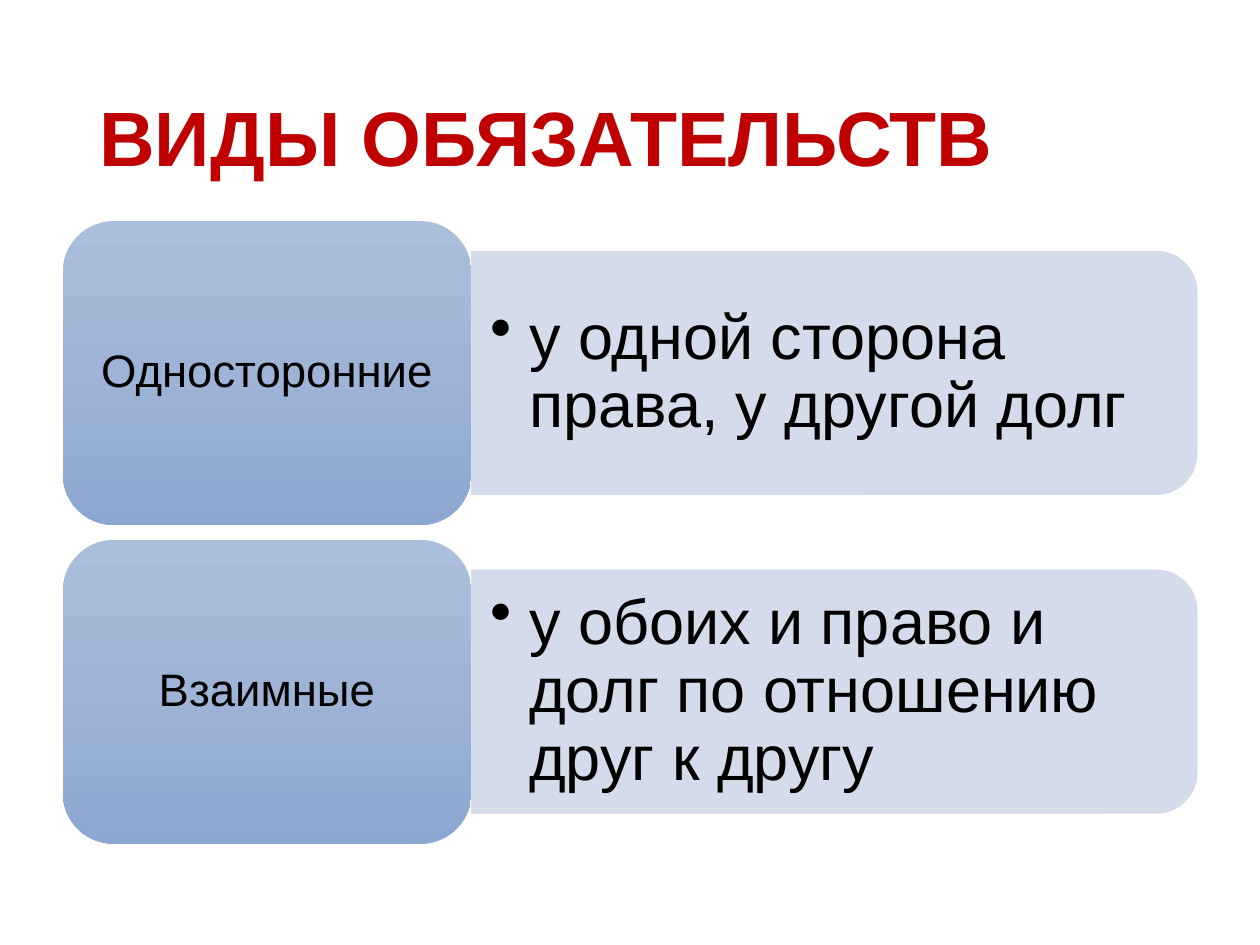
import copy
from dataclasses import dataclass

import pptx
import pptx.dml.color
import pptx.enum.shapes
import pptx.enum.text
import pptx.oxml
import pptx.oxml.ns
import pptx.util
from pptx.util import Inches

COLORS = {
    "title": "C00000",
    "text": "000000",
    "panel": "D0D8E8",
    "card_top": "ABBEDB",
    "card_middle": "9EB3D5",
    "card_bottom": "8CA7D2",
}
FONT = "Arial"
FIRST_CENTER = 2.96
ROW_STEP = 2.53
CARD_LEFT, CARD_WIDTH, CARD_HEIGHT = 0.5, 3.24, 2.41
PANEL_LEFT = CARD_LEFT + CARD_WIDTH
PANEL_WIDTH, PANEL_HEIGHT = 5.76, 1.93
PANEL_OPACITY = 90


@dataclass
class Obligation:
    name: str
    meaning: str


@dataclass
class Box:
    left: float
    center: float
    width: float
    height: float

    def lengths(self) -> tuple:
        top = self.center - self.height / 2
        return tuple(Inches(value) for value in (self.left, top, self.width, self.height))


OBLIGATIONS = [
    Obligation("Односторонние", "у одной сторона права, у другой долг"),
    Obligation("Взаимные", "у обоих и право и долг по отношению друг к другу"),
]


def rgb(name: str) -> pptx.dml.color.RGBColor:
    return pptx.dml.color.RGBColor.from_string(COLORS[name])


def add_text(slide, box: Box, text: str, size: int, color: str = "text",
             bold: bool = False, centered: bool = False, bullet: bool = False,
             margins: tuple = (0.1, 0.05)) -> None:
    frame = slide.shapes.add_textbox(*box.lengths()).text_frame
    frame.word_wrap = True
    frame.vertical_anchor = pptx.enum.text.MSO_ANCHOR.MIDDLE
    frame.margin_left = frame.margin_right = Inches(margins[0])
    frame.margin_top = frame.margin_bottom = Inches(margins[1])
    paragraph = frame.paragraphs[0]
    paragraph.text = text
    paragraph.line_spacing = 0.9
    if centered:
        paragraph.alignment = pptx.enum.text.PP_ALIGN.CENTER
    if bullet:
        properties = paragraph._p.get_or_add_pPr()
        properties.set("marL", str(Inches(0.31)))
        properties.set("indent", str(Inches(-0.31)))
        mark = pptx.oxml.parse_xml(f'<a:buChar {pptx.oxml.ns.nsdecls("a")} char="•"/>')
        properties.append(mark)
    paragraph.font.name = FONT
    paragraph.font.size = pptx.util.Pt(size)
    paragraph.font.bold = bold
    paragraph.font.color.rgb = rgb(color)


def add_panel(slide, center: float) -> None:
    left = PANEL_LEFT + (PANEL_WIDTH - PANEL_HEIGHT) / 2
    box = Box(left, center, PANEL_HEIGHT, PANEL_WIDTH)
    shape = slide.shapes.add_shape(
        pptx.enum.shapes.MSO_SHAPE.ROUND_2_SAME_RECTANGLE, *box.lengths())
    shape.rotation = 90
    shape.shadow.inherit = False
    shape.fill.solid()
    shape.fill.fore_color.rgb = rgb("panel")
    shape.line.color.rgb = rgb("panel")
    shape.line.width = pptx.util.Pt(0.5)
    for color in shape._element.spPr.iter(pptx.oxml.ns.qn("a:srgbClr")):
        alpha = color.makeelement(pptx.oxml.ns.qn("a:alpha"), {"val": str(PANEL_OPACITY * 1000)})
        color.append(alpha)


def add_card(slide, center: float) -> None:
    box = Box(CARD_LEFT, center, CARD_WIDTH, CARD_HEIGHT)
    shape = slide.shapes.add_shape(
        pptx.enum.shapes.MSO_SHAPE.ROUNDED_RECTANGLE, *box.lengths())
    shape.shadow.inherit = False
    shape.line.fill.background()
    shape.fill.gradient()
    shape.fill.gradient_angle = 270
    stop_list = next(shape._element.spPr.iter(pptx.oxml.ns.qn("a:gsLst")))
    stop_list.insert(1, copy.deepcopy(stop_list[0]))
    names = ("card_top", "card_middle", "card_bottom")
    for index, (stop, name) in enumerate(zip(shape.fill.gradient_stops, names)):
        stop.position = index / 2
        stop.color.rgb = rgb(name)


def add_row(slide, obligation: Obligation, center: float) -> None:
    add_panel(slide, center)
    add_text(slide, Box(PANEL_LEFT, center, 5.67, 1.74), obligation.meaning, 36,
             bullet=True, margins=(0.15, 0.07))
    add_card(slide, center)
    add_text(slide, Box(0.62, center, 3, 2.18), obligation.name, 26,
             centered=True, margins=(0.11, 0.05))


def main() -> None:
    presentation = pptx.Presentation()
    presentation.slide_width = Inches(10)
    presentation.slide_height = Inches(7.5)
    slide = presentation.slides.add_slide(presentation.slide_layouts[6])
    add_text(slide, Box(0.69, 1.12, 8.62, 1.45), "ВИДЫ ОБЯЗАТЕЛЬСТВ", 44,
             color="title", bold=True)
    for index, obligation in enumerate(OBLIGATIONS):
        add_row(slide, obligation, FIRST_CENTER + index * ROW_STEP)
    presentation.save("out.pptx")


if __name__ == "__main__":
    main()
